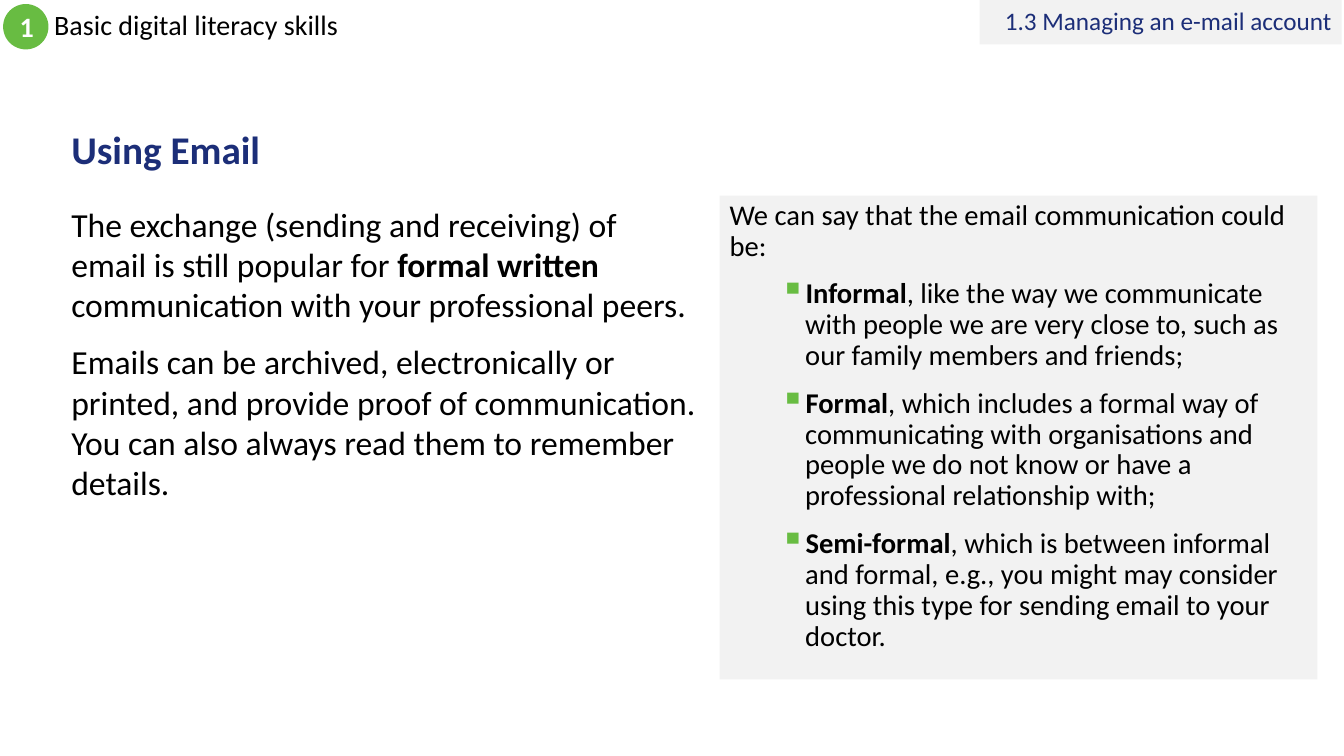
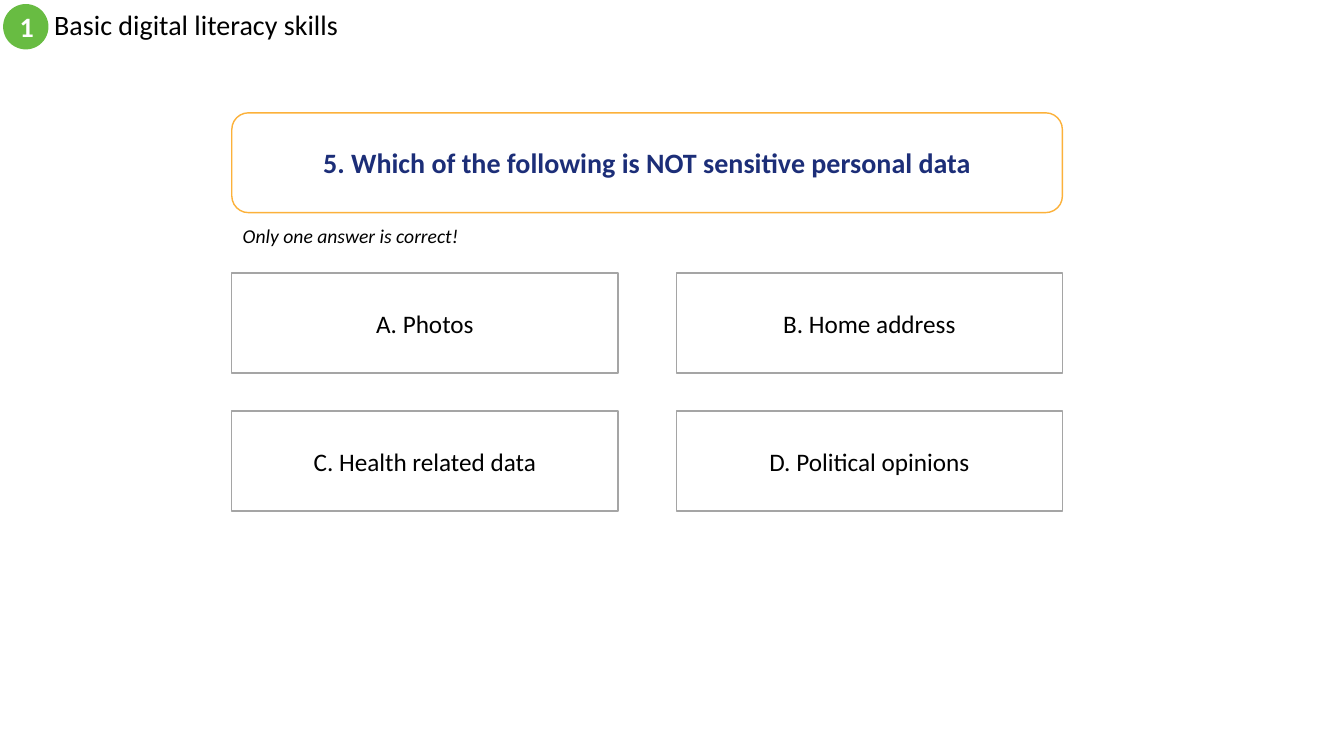
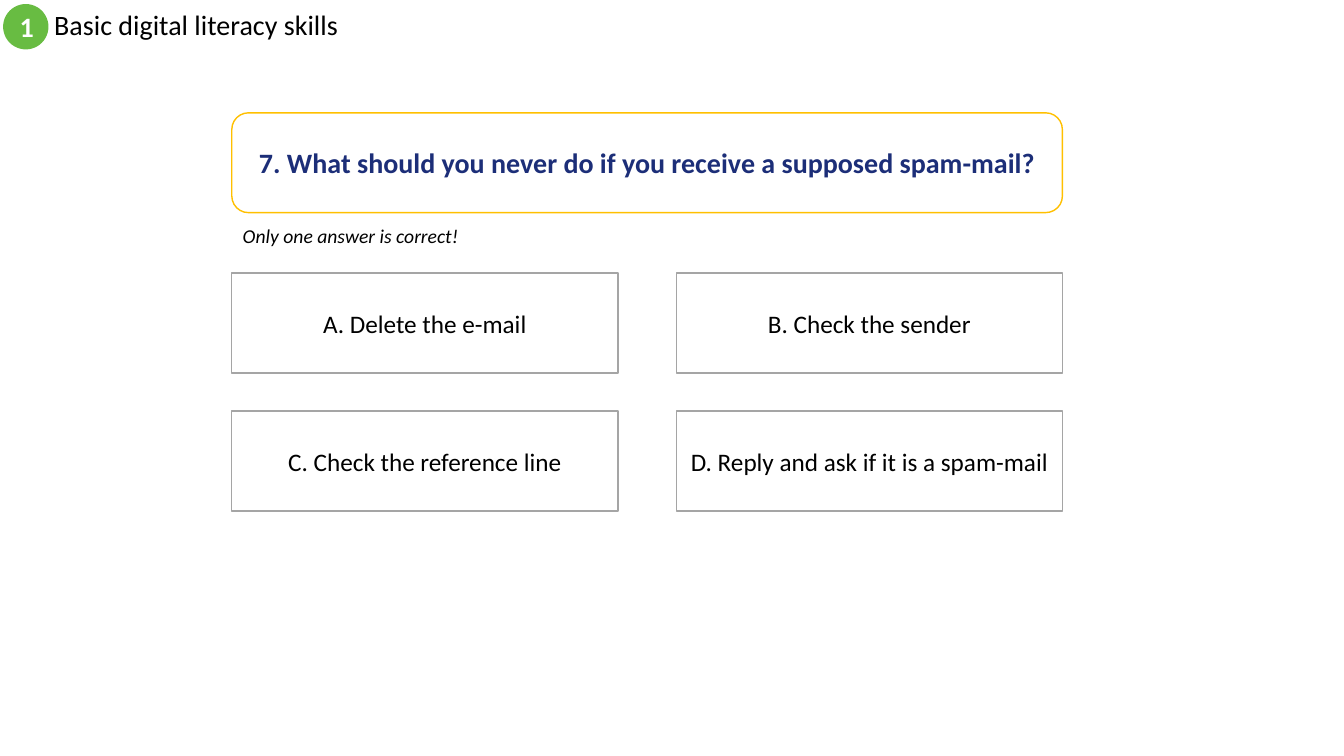
"""Build three slides on basic digital literacy: one on email, two quiz questions."""
import pptx
import pptx.util
import pptx.dml.color
import pptx.enum.shapes
import pptx.enum.text
import pptx.oxml.ns
import lxml.etree

Pt = pptx.util.Pt
KIND = pptx.enum.shapes.MSO_SHAPE
ALIGN = pptx.enum.text.PP_ALIGN
ANCHOR = pptx.enum.text.MSO_ANCHOR

FONT = "Calibri"
BLACK, WHITE, NAVY = "000000", "FFFFFF", "1C2E78"
GREEN, PALE, GREY = "68BC42", "F2F2F2", "A5A5A5"

TOPIC = ("1", "Basic digital literacy skills")
SECTION = "1.3 Managing an e-mail account"
TITLE = "Using Email"
BODY = [
    [("The exchange (sending and receiving) of email is still popular for ", False),
     ("formal written ", True),
     ("communication with your professional peers.", False)],
    [("Emails can be archived, electronically or printed, and provide proof of "
      "communication. You can also always read them to remember details.", False)],
]
LEAD = "We can say that the email communication could be:"
STYLES = [
    ("Informal", ", like the way we communicate with people we are very close to, "
     "such as our family members and friends;"),
    ("Formal", ", which includes a formal way of communicating with organisations "
     "and people we do not know or have a professional relationship with;"),
    ("Semi-formal", ", which is between informal and formal, e.g., you might may "
     "consider using this type for sending email to your doctor."),
]
HINT = "Only one answer is correct!"
QUIZ = [
    ("5. Which of the following is NOT sensitive personal data", "FCB13A",
     ["A. Photos", "B. Home address", "C. Health related data",
      "D. Political opinions"]),
    ("7. What should you never do if you receive a supposed spam-mail?", "FFC000",
     ["A. Delete the e-mail", "B. Check the sender", "C. Check the reference line",
      "D. Reply and ask if it is a spam-mail"]),
]

LEFT, WIDE, TALL = 165.6, 593.3, 71.3
CELL, STEP_X, STEP_Y = 275.8, 317.5, 98.6


def color(code):
    return pptx.dml.color.RGBColor.from_string(code)


def add_box(slide, at, kind=None, fill=None, line=None, anchor=ANCHOR.MIDDLE):
    spot = [Pt(n) for n in at]
    if kind is None:
        shape = slide.shapes.add_textbox(*spot)
    else:
        shape = slide.shapes.add_shape(kind, *spot)
        shape.shadow.inherit = False
        shape.fill.solid()
        shape.fill.fore_color.rgb = color(fill)
        if line:
            shape.line.color.rgb = color(line)
            shape.line.width = Pt(1)
        else:
            shape.line.fill.background()
    frame = shape.text_frame
    frame.word_wrap = True
    frame.vertical_anchor = anchor
    return frame


def add_bullet(para):
    para.level = 1
    props = para._p.get_or_add_pPr()
    props.set("marL", str(Pt(54)))
    props.set("indent", str(Pt(-18)))
    tag = pptx.oxml.ns.qn
    tint = lxml.etree.SubElement(props, tag("a:buClr"))
    lxml.etree.SubElement(tint, tag("a:srgbClr"), val=GREEN)
    lxml.etree.SubElement(props, tag("a:buSzPct"), val="120000")
    lxml.etree.SubElement(props, tag("a:buChar"), char="▪")


def write(frame, paras, size, ink=BLACK, align=ALIGN.LEFT, space=None, gap=0,
          marked=False, italic=False):
    for num, runs in enumerate(paras):
        para = frame.add_paragraph() if num else frame.paragraphs[0]
        para.alignment = align
        if space:
            para.line_spacing = space
        if gap:
            para.space_before = Pt(gap if num else 0)
            para.space_after = Pt(gap)
        if marked and num:
            add_bullet(para)
        for text, bold in runs:
            run = para.add_run()
            run.text = text
            font = run.font
            font.name, font.size = FONT, Pt(size)
            font.bold, font.italic = bold, italic
            font.color.rgb = color(ink)


def add_slide(deck):
    slide = deck.slides.add_slide(deck.slide_layouts[6])
    mark, topic = TOPIC
    write(add_box(slide, (31.7, 2.9, 576, 32.4)), [[(topic, False)]], 20, space=0.9)
    badge = add_box(slide, (2.2, 2.9, 32.4, 32.4), KIND.OVAL, GREEN)
    write(badge, [[(mark, True)]], 20, WHITE, ALIGN.CENTER)
    return slide


def add_lesson(deck):
    slide = add_slide(deck)
    write(add_box(slide, (43.9, 85, 871.2, 47.5)), [[(TITLE, True)]], 28, NAVY,
          space=0.9)
    write(add_box(slide, (43.9, 141.8, 460.8, 358.6), anchor=ANCHOR.TOP), BODY, 24,
          gap=6)
    panel = add_box(slide, (514.1, 139.7, 427, 345.6), KIND.RECTANGLE, PALE,
                    anchor=ANCHOR.TOP)
    items = [[(name, True), (rest, False)] for name, rest in STYLES]
    write(panel, [[(LEAD, False)]] + items, 20.4, space=0.9, gap=6, marked=True)
    label = add_box(slide, (699.8, 0, 258.5, 31.7), KIND.RECTANGLE, PALE)
    write(label, [[(SECTION, False)]], 18, NAVY, ALIGN.RIGHT, 0.9)


def add_quiz(deck, ask, edge, picks):
    slide = add_slide(deck)
    head = add_box(slide, (LEFT, 80.6, WIDE, TALL), KIND.ROUNDED_RECTANGLE, WHITE, edge)
    write(head, [[(ask, True)]], 20, NAVY, ALIGN.CENTER)
    for num, pick in enumerate(picks):
        row, col = divmod(num, 2)
        at = (LEFT + col * STEP_X, 195.1 + row * STEP_Y, CELL, TALL)
        cell = add_box(slide, at, KIND.RECTANGLE, WHITE, GREY)
        write(cell, [[(pick, False)]], 18, align=ALIGN.CENTER)
    hint = add_box(slide, (166.3, 156.2, 169.9, 24.5), anchor=ANCHOR.TOP)
    hint.word_wrap = False
    hint.auto_size = pptx.enum.text.MSO_AUTO_SIZE.SHAPE_TO_FIT_TEXT
    write(hint, [[(HINT, False)]], 14, italic=True)


def main():
    deck = pptx.Presentation()
    deck.slide_width, deck.slide_height = Pt(960), Pt(540)
    add_lesson(deck)
    for quiz in QUIZ:
        add_quiz(deck, *quiz)
    deck.save("out.pptx")


if __name__ == "__main__":
    main()
